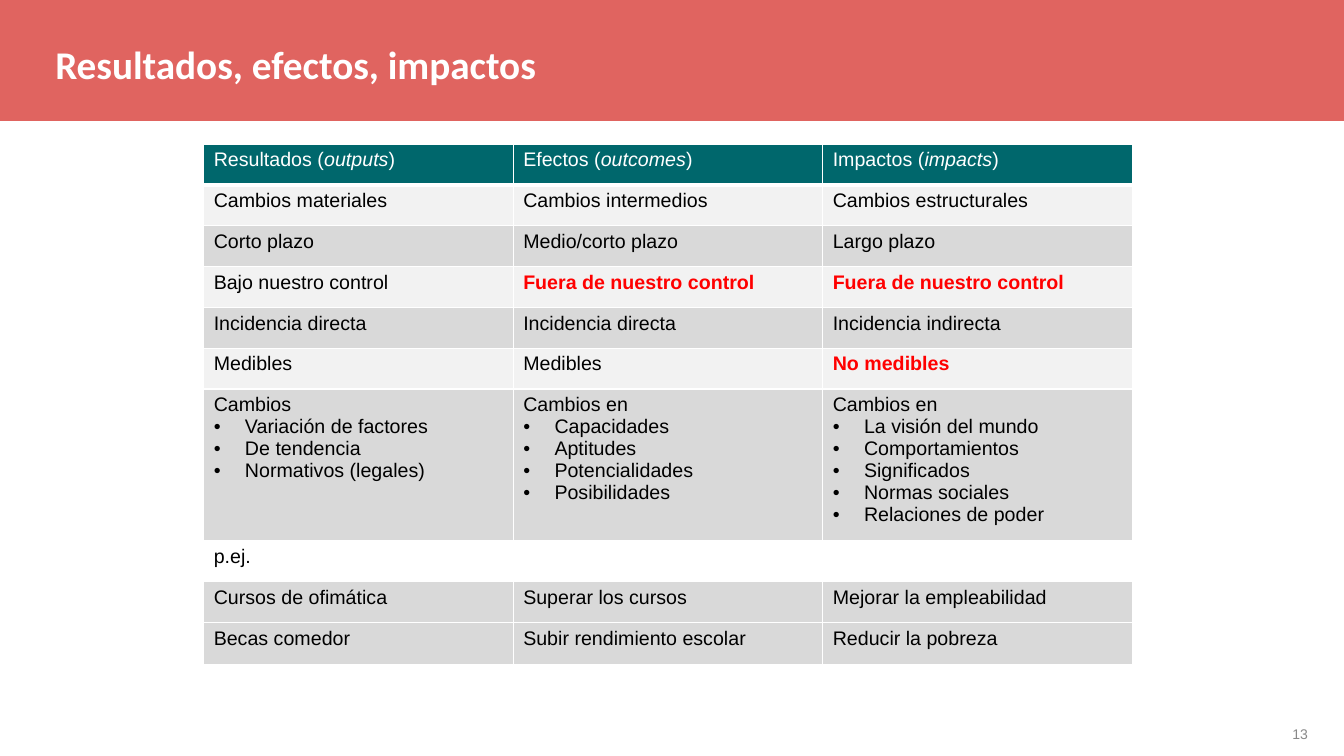
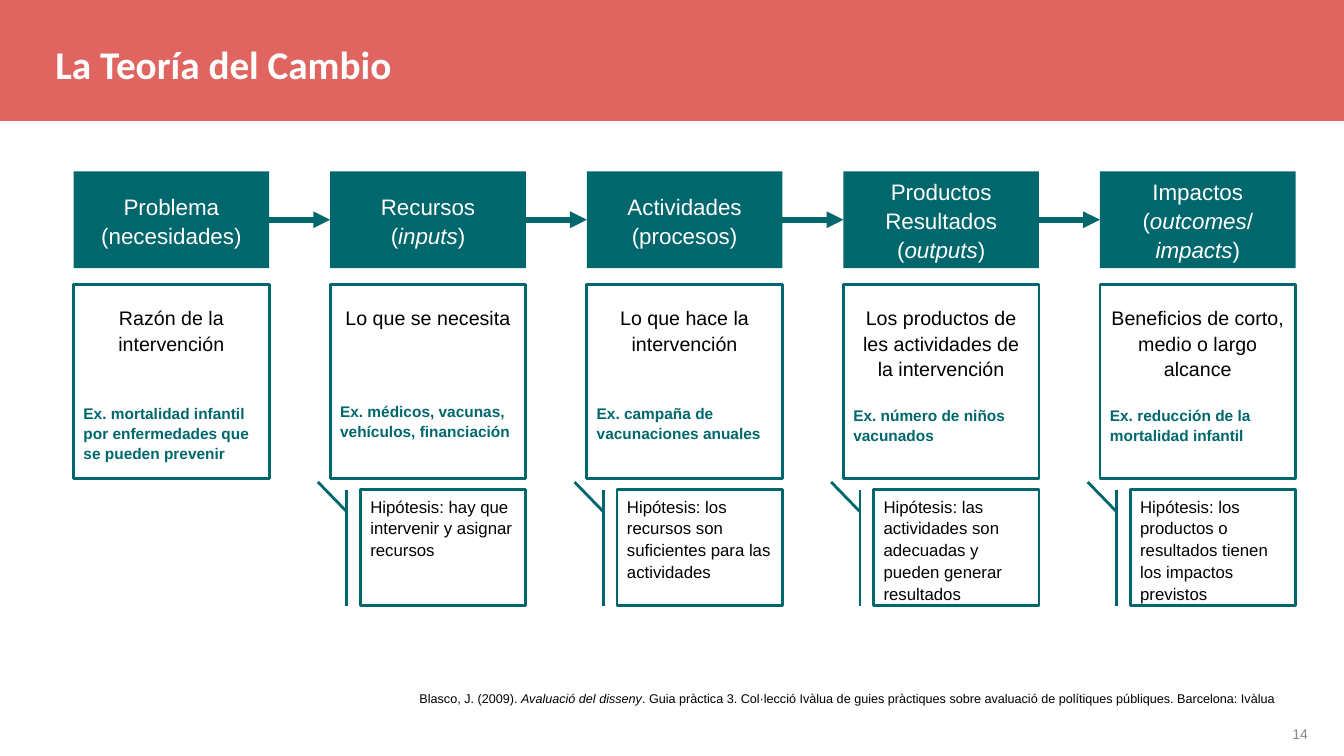
"""Build two slides on results, effects, impacts and the theory of change."""
from lxml.etree import SubElement
from pptx import Presentation
from pptx.dml.color import RGBColor
from pptx.enum.shapes import MSO_CONNECTOR, MSO_SHAPE
from pptx.enum.text import MSO_ANCHOR, PP_ALIGN
from pptx.oxml.ns import qn
from pptx.util import Inches, Pt

TEAL, CORAL, WHITE, BLACK, RED = "00676C", "D62F29", "FFFFFF", "000000", "FF0000"
LIGHT, MID, GREY = "F2F2F2", "D9D9D9", "898989"

TITLE = dict(size=28, name="Calibri", color=WHITE, bold=True)
NUMBER = dict(size=10, color=GREY)
SOURCE = dict(size=9)
CELL = dict(size=14)
HEAD_CELL = dict(size=14, color=WHITE)
ALERT = dict(size=14, color=RED, bold=True)
STAGE = dict(size=16, color=WHITE)
MEANING = dict(size=14)
EXAMPLE = dict(size=11, color=TEAL, bold=True)
HYPOTHESIS = dict(size=12)

ROWS = [
    (TEAL, ["Resultados (*outputs*)", "Efectos (*outcomes*)", "Impactos (*impacts*)"]),
    (LIGHT, ["Cambios materiales", "Cambios intermedios", "Cambios estructurales"]),
    (MID, ["Corto plazo", "Medio/corto plazo", "Largo plazo"]),
    (LIGHT, ["Bajo nuestro control", "Fuera de nuestro control", "Fuera de nuestro control"]),
    (MID, ["Incidencia directa", "Incidencia directa", "Incidencia indirecta"]),
    (LIGHT, ["Medibles", "Medibles", "No medibles"]),
    (MID, ["Cambios\nVariación de factores\nDe tendencia\nNormativos (legales)",
           "Cambios en\nCapacidades\nAptitudes\nPotencialidades\nPosibilidades",
           "Cambios en\nLa visión del mundo\nComportamientos\nSignificados\n"
           "Normas sociales\nRelaciones de poder"]),
    (None, ["p.ej.", "", ""]),
    (MID, ["Cursos de ofimática", "Superar los cursos", "Mejorar la empleabilidad"]),
    (MID, ["Becas comedor", "Subir rendimiento escolar", "Reducir la pobreza"]),
]
ALERTS = {"Fuera de nuestro control", "No medibles"}
ROW_HEIGHTS = [2.43 / 6] * 6 + [1.41] + [0.41] * 3

STAGES = [
    dict(name="Problema\n(necesidades)", meaning="Razón de la intervención", lines=2,
         example="Ex. mortalidad infantil por enfermedades que se pueden prevenir"),
    dict(name="Recursos\n(*inputs*)", meaning="Lo que se necesita", lines=1,
         example="Ex. médicos, vacunas, vehículos, financiación",
         hypothesis="Hipótesis: hay que intervenir y asignar recursos"),
    dict(name="Actividades\n(procesos)", meaning="Lo que hace la intervención", lines=2,
         example="Ex. campaña de vacunaciones anuales",
         hypothesis="Hipótesis: los recursos son suficientes para las actividades"),
    dict(name="Productos\nResultados\n(*outputs*)", lines=3,
         meaning="Los productos de les actividades de la intervención",
         example="Ex. número de niños vacunados",
         hypothesis="Hipótesis: las actividades son adecuadas y pueden generar resultados"),
    dict(name="Impactos\n(*outcomes*/\n*impacts*)", lines=3,
         meaning="Beneficios de corto, medio o largo alcance",
         example="Ex. reducción de la mortalidad infantil",
         hypothesis="Hipótesis: los productos o resultados tienen los impactos previstos"),
]
LEFT, STEP, BOX_W, INDENT = 0.73, 2.545, 1.94, 0.3
MEANING_LINES, LINE_PT, SPACING = 4, 16.9, 1.08
CALLOUT = (0.188, -0.083, -0.068, -0.257)
CITATION = ("Blasco, J. (2009). *Avaluació del disseny*. Guia pràctica 3. Col·lecció Ivàlua de "
            "guies pràctiques sobre avaluació de polítiques públiques. Barcelona: Ivàlua")


def rgb(value):
    """Return a colour from a hex string."""
    return RGBColor.from_string(value)


def style(font, fmt):
    """Apply a dict of format values to a font."""
    for key, value in (dict(name="Arial", color=BLACK, bold=False) | fmt).items():
        if key == "color":
            font.color.rgb = rgb(value)
        else:
            setattr(font, key, Pt(value) if key == "size" else value)


def add_bullet(p):
    """Give a paragraph a hanging black bullet."""
    pPr = p._p.get_or_add_pPr()
    pPr.set("marL", str(Inches(0.31)))
    pPr.set("indent", str(-Inches(0.31)))
    SubElement(SubElement(pPr, qn("a:buClr")), qn("a:srgbClr"), val=BLACK)
    SubElement(pPr, qn("a:buFont"), typeface="Arial")
    SubElement(pPr, qn("a:buChar"), char="•")


def write(tf, text, fmt, align=PP_ALIGN.LEFT, spacing=None, bullets=False):
    """Write one paragraph per line, with italics between asterisks."""
    for i, line in enumerate(text.split("\n")):
        p = tf.add_paragraph() if tf.text else tf.paragraphs[0]
        if bullets and i:
            add_bullet(p)
        p.alignment = align
        if spacing:
            p.line_spacing = spacing
        for j, part in enumerate(line.split("*")):
            if part:
                r = p.add_run()
                r.text = part
                style(r.font, fmt | dict(italic=j % 2 == 1))
    return p


def add_text(s, box, text, fmt, align=PP_ALIGN.LEFT, anchor=MSO_ANCHOR.MIDDLE):
    """Add a wrapped text box."""
    tf = s.shapes.add_textbox(*map(Inches, box)).text_frame
    tf.word_wrap = True
    tf.vertical_anchor = anchor
    write(tf, text, fmt, align)


def add_box(s, box, fill, line=None, kind=MSO_SHAPE.RECTANGLE, anchor=MSO_ANCHOR.TOP):
    """Add a flat preset shape."""
    sp = s.shapes.add_shape(kind, *map(Inches, box))
    sp.shadow.inherit = False
    sp.fill.solid()
    sp.fill.fore_color.rgb = rgb(fill)
    if line:
        sp.line.color.rgb = rgb(line)
        sp.line.width = Pt(2)
    else:
        sp.line.fill.background()
    sp.text_frame.word_wrap = True
    sp.text_frame.vertical_anchor = anchor
    return sp


def add_arrow(s, start, end):
    """Join two boxes with an arrow pointing right."""
    c = s.shapes.add_connector(MSO_CONNECTOR.STRAIGHT, 0, 0, 0, 0)
    c.begin_connect(start, 3)
    c.end_connect(end, 1)
    c.line.color.rgb = rgb(TEAL)
    c.line.width = Pt(4)
    SubElement(c.line._get_or_add_ln(), qn("a:tailEnd"), type="triangle")
    SubElement(c._element.spPr, qn("a:effectLst"))


def add_slide(prs, title, number):
    """Add a slide with the band, title and number."""
    s = prs.slides.add_slide(prs.slide_layouts[6])
    band = add_box(s, (0, -0.01, 13.34, 1.21), CORAL)
    SubElement(band.fill._xPr.find(".//" + qn("a:srgbClr")), qn("a:alpha"), val="74000")
    add_text(s, (0.45, 0.32, 9.55, 0.63), title, TITLE)
    add_text(s, (12.23, 7.14, 0.84, 0.29), str(number), NUMBER, PP_ALIGN.RIGHT)
    return s


def format_cell(cell, fill, bottom):
    """Set the white borders and the fill of a cell."""
    tcPr = cell._tc.get_or_add_tcPr()
    for side, width in (("L", 1), ("R", 1), ("T", 1), ("B", bottom)):
        ln = SubElement(tcPr, qn("a:ln" + side), w=str(Pt(width)))
        SubElement(SubElement(ln, qn("a:solidFill")), qn("a:srgbClr"), val=WHITE)
    if fill:
        cell.fill.solid()
        cell.fill.fore_color.rgb = rgb(fill)
    else:
        cell.fill.background()


def add_comparison(s):
    """Add the table of results, effects and impacts."""
    box = map(Inches, (2.02, 1.43, 9.21, sum(ROW_HEIGHTS)))
    table = s.shapes.add_table(len(ROWS), 3, *box).table
    table.first_row = table.horz_banding = False
    for i, (fill, texts) in enumerate(ROWS):
        table.rows[i].height = Inches(ROW_HEIGHTS[i])
        for j, text in enumerate(texts):
            cell = table.cell(i, j)
            format_cell(cell, fill, 1 if i else 3)
            fmt = CELL if i else HEAD_CELL
            if text in ALERTS:
                fmt = ALERT
                cell.margin_right = 0
            if text:
                write(cell.text_frame, text, fmt, bullets=True)


def add_theory(s):
    """Add the chain of stages with meanings and hypotheses."""
    previous = None
    for i, stage in enumerate(STAGES):
        x = LEFT + i * STEP
        head = add_box(s, (x, 1.7, BOX_W, 0.96), TEAL, anchor=MSO_ANCHOR.MIDDLE)
        write(head.text_frame, stage["name"], STAGE, PP_ALIGN.CENTER, SPACING)
        if previous:
            add_arrow(s, previous, head)
        previous = head

        tf = add_box(s, (x, 2.82, BOX_W, 1.93), WHITE, TEAL).text_frame
        tf.margin_top = Inches(0.2)
        write(tf, stage["meaning"], MEANING, PP_ALIGN.CENTER, SPACING)
        p = write(tf, stage["example"], EXAMPLE, spacing=SPACING)
        p.space_before = Pt((MEANING_LINES - stage["lines"]) * LINE_PT)

        if "hypothesis" in stage:
            note = add_box(s, (x + INDENT, 4.86, BOX_W - INDENT, 1.15), WHITE, TEAL,
                           MSO_SHAPE.LINE_CALLOUT_1_BORDER_AND_ACCENT_BAR)
            for k, value in enumerate(CALLOUT):
                note.adjustments[k] = value
            write(note.text_frame, stage["hypothesis"], HYPOTHESIS, spacing=SPACING)


def main():
    """Build and save the presentation."""
    prs = Presentation()
    prs.slide_width, prs.slide_height = Inches(13.33), Inches(7.5)
    add_comparison(add_slide(prs, "Resultados, efectos, impactos", 13))
    s = add_slide(prs, "La Teoría del Cambio", 14)
    add_theory(s)
    add_text(s, (2.82, 6.8, 9.92, 0.25), CITATION, SOURCE, PP_ALIGN.RIGHT, MSO_ANCHOR.TOP)
    prs.save("out.pptx")


if __name__ == "__main__":
    main()
